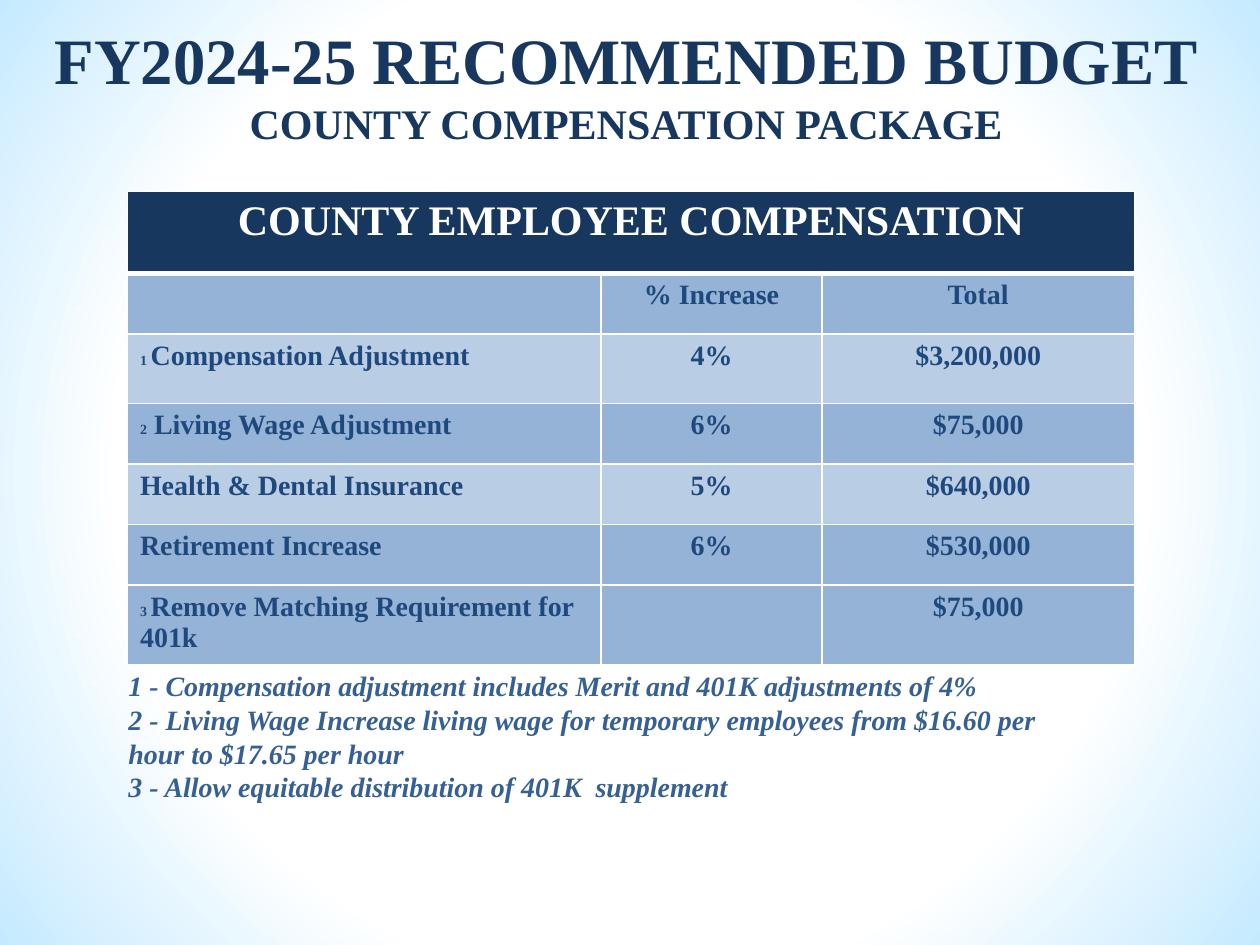
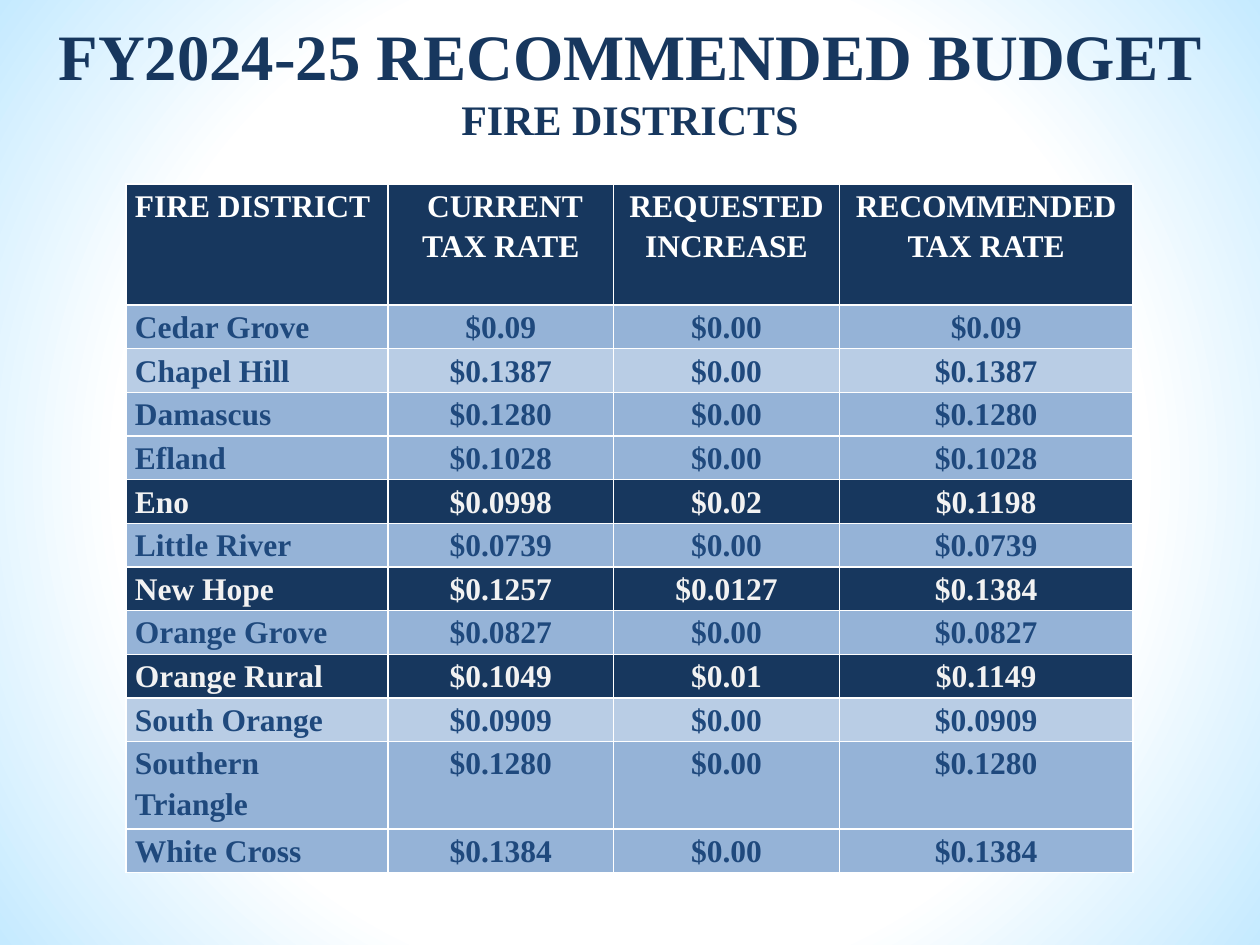
import pptx
import pptx.dml.color
import pptx.enum.text
import pptx.oxml
import pptx.oxml.ns
import pptx.util
from pptx.util import Cm

FONT = "Times New Roman"
NAVY, BLUE, NOTE_BLUE = "17375E", "1F497D", "376092"
MID, LIGHT = "95B3D7", "B9CDE5"
WHITE, OFF_WHITE, SKY = "FFFFFF", "F2F2F2", "C5EAFF"
CENTER = pptx.enum.text.PP_ALIGN.CENTER
LEFT = pptx.enum.text.PP_ALIGN.LEFT
HEADLINE = "FY2024-25 RECOMMENDED BUDGET"

PAY_HEADING = "COUNTY EMPLOYEE COMPENSATION"
# Each label is a footnote mark and the text after it.
PAY_ROWS = [
    (("", ""), "% Increase", "Total"),
    (("1 ", "Compensation Adjustment"), "4%", "$3,200,000"),
    (("2", " Living Wage Adjustment"), "6%", "$75,000"),
    (("", "Health & Dental Insurance"), "5%", "$640,000"),
    (("", "Retirement Increase"), "6%", "$530,000"),
    (("3 ", "Remove Matching Requirement for 401k"), "", "$75,000"),
]
LIGHT_PAY_ROWS = {1, 3}
FOOTNOTES = [
    "1 - Compensation adjustment includes Merit and 401K adjustments of 4%",
    "2 - Living Wage Increase living wage for temporary employees "
    "from $16.60 per hour to $17.65 per hour",
    "3 - Allow equitable distribution of 401K  supplement",
]

DISTRICT_HEADINGS = ("FIRE DISTRICT", " CURRENT TAX RATE",
                     "REQUESTED INCREASE", "RECOMMENDED TAX RATE")
NO_INCREASE = "$0.00"
DISTRICTS = [
    ("Cedar Grove", "$0.09", NO_INCREASE, "$0.09"),
    ("Chapel Hill", "$0.1387", NO_INCREASE, "$0.1387"),
    ("Damascus", "$0.1280", NO_INCREASE, "$0.1280"),
    ("Efland", "$0.1028", NO_INCREASE, "$0.1028"),
    ("Eno", "$0.0998", "$0.02", "$0.1198"),
    ("Little River", "$0.0739", NO_INCREASE, "$0.0739"),
    ("New Hope", "$0.1257", "$0.0127", "$0.1384"),
    ("Orange Grove", "$0.0827", NO_INCREASE, "$0.0827"),
    ("Orange Rural", "$0.1049", "$0.01", "$0.1149"),
    ("South Orange", "$0.0909", NO_INCREASE, "$0.0909"),
    ("Southern Triangle", "$0.1280", NO_INCREASE, "$0.1280"),
    ("White Cross", "$0.1384", NO_INCREASE, "$0.1384"),
]
LIGHT_DISTRICTS = {"Chapel Hill", "South Orange"}


def rgb(hex_code):
    return pptx.dml.color.RGBColor.from_string(hex_code)


def format_runs(paragraph, size, color, italic=False):
    for run in paragraph.runs:
        run.font.name = FONT
        run.font.size = pptx.util.Pt(size)
        run.font.bold = True
        run.font.italic = italic
        run.font.color.rgb = rgb(color)


def set_background(master):
    """Give every slide a white centre that fades to sky blue."""
    background = pptx.oxml.parse_xml(
        f'<p:bg {pptx.oxml.ns.nsdecls("p", "a")}><p:bgPr>'
        '<a:gradFill rotWithShape="1"><a:gsLst>'
        f'<a:gs pos="65000"><a:srgbClr val="{WHITE}"/></a:gs>'
        f'<a:gs pos="100000"><a:srgbClr val="{SKY}"/></a:gs></a:gsLst>'
        '<a:path path="circle">'
        '<a:fillToRect l="50000" t="50000" r="50000" b="50000"/></a:path>'
        '</a:gradFill><a:effectLst/></p:bgPr></p:bg>')
    content = master.element.cSld
    for old in content.findall(pptx.oxml.ns.qn("p:bg")):
        content.remove(old)
    content.insert(0, background)


def add_titled_slide(prs, topic, left, top, width, height):
    slide = prs.slides.add_slide(prs.slide_layouts[5])
    title = slide.shapes.title
    title.left, title.top = Cm(left), Cm(top)
    title.width, title.height = Cm(width), Cm(height)
    frame = title.text_frame
    frame.text = f"{HEADLINE}\n{topic}"
    frame.word_wrap = True
    frame.auto_size = pptx.enum.text.MSO_AUTO_SIZE.NONE
    frame.vertical_anchor = pptx.enum.text.MSO_ANCHOR.MIDDLE
    for paragraph, size in zip(frame.paragraphs, (37, 24)):
        paragraph.alignment = CENTER
        format_runs(paragraph, size, NAVY)
    return slide


def add_grid(slide, left, top, widths, heights):
    frame = slide.shapes.add_table(
        len(heights), len(widths), Cm(left), Cm(top),
        Cm(sum(widths)), Cm(sum(heights)))
    grid = frame.table
    grid.first_row = grid.horz_banding = False
    for column, width in zip(grid.columns, widths):
        column.width = Cm(width)
    for row, height in zip(grid.rows, heights):
        row.height = Cm(height)
    return grid


def style_cell(cell, fill, top_line=1, bottom_line=1):
    """Draw the white borders (points), then fill the cell."""
    properties = cell._tc.get_or_add_tcPr()
    lines = {"L": 1, "R": 1, "T": top_line, "B": bottom_line}
    for side, points in lines.items():
        properties.append(pptx.oxml.parse_xml(
            f'<a:ln{side} {pptx.oxml.ns.nsdecls("a")} '
            f'w="{pptx.util.Pt(points)}"><a:solidFill>'
            f'<a:srgbClr val="{WHITE}"/></a:solidFill></a:ln{side}>'))
    cell.fill.solid()
    cell.fill.fore_color.rgb = rgb(fill)


def write_cell(cell, text, size, color, alignment):
    paragraph = cell.text_frame.paragraphs[0]
    paragraph.text = text
    paragraph.alignment = alignment
    format_runs(paragraph, size, color)
    return paragraph


def add_pay_table(slide, left, top):
    grid = add_grid(slide, left, top, (9.55, 4.45, 6.3),
                    (1.65, 1.22, 1.4, 1.22, 1.22, 1.22, 1.59))
    for cell in grid.rows[0].cells:
        style_cell(cell, NAVY, bottom_line=3)
    heading = grid.cell(0, 0)
    heading.merge(grid.cell(0, 2))
    write_cell(heading, PAY_HEADING, 24, WHITE, CENTER)

    for index, ((mark, label), increase, total) in enumerate(PAY_ROWS):
        cells = list(grid.rows[index + 1].cells)
        for cell in cells:
            style_cell(cell, LIGHT if index in LIGHT_PAY_ROWS else MID,
                       top_line=1 if index else 3)
        for cell, text in zip(cells[1:], (increase, total)):
            write_cell(cell, text, 16, BLUE, CENTER)
        paragraph = write_cell(cells[0], label, 16, BLUE, LEFT)
        if mark:
            paragraph.text = mark
            paragraph.add_run().text = label
            format_runs(paragraph, 16, BLUE)
            paragraph.runs[0].font.size = pptx.util.Pt(8)


def add_footnotes(slide, left, top, width, height):
    box = slide.shapes.add_textbox(Cm(left), Cm(top), Cm(width), Cm(height))
    frame = box.text_frame
    frame.word_wrap = True
    frame.text = "\n".join(FOOTNOTES)
    for paragraph in frame.paragraphs:
        format_runs(paragraph, 16, NOTE_BLUE, italic=True)


def district_colors(name, increase):
    """Return fill and text colour; districts with an increase stand out."""
    if increase != NO_INCREASE:
        return NAVY, OFF_WHITE
    return (LIGHT if name in LIGHT_DISTRICTS else MID), BLUE


def add_district_table(slide, left, top):
    line = 0.88
    heights = [2.44] + [line * (2 if name == "Southern Triangle" else 1)
                        for name, *_ in DISTRICTS]
    grid = add_grid(slide, left, top, (5.28, 4.55, 4.55, 5.92), heights)
    for index, texts in enumerate([DISTRICT_HEADINGS] + DISTRICTS):
        fill, color = (district_colors(texts[0], texts[2]) if index
                       else (NAVY, WHITE))
        for column, text in enumerate(texts):
            cell = grid.cell(index, column)
            style_cell(cell, fill)
            cell.margin_left = cell.margin_right = Cm(0.18)
            cell.margin_top = cell.margin_bottom = 0
            paragraph = write_cell(cell, text, 18, color,
                                   CENTER if column else LEFT)
            paragraph.line_spacing = 1.15


def main():
    prs = pptx.Presentation()
    prs.slide_width, prs.slide_height = Cm(25.4), Cm(19.05)
    set_background(prs.slide_master)

    compensation = add_titled_slide(
        prs, "COUNTY COMPENSATION PACKAGE", -0.08, 0.2, 25.4, 2.97)
    add_footnotes(compensation, 2.34, 13.36, 18.92, 3.58)
    add_pay_table(compensation, 2.57, 3.86)

    fire = add_titled_slide(prs, "FIRE DISTRICTS", 0, 0, 25.4, 3.23)
    add_district_table(fire, 2.54, 3.71)
    prs.save("out.pptx")


if __name__ == "__main__":
    main()
